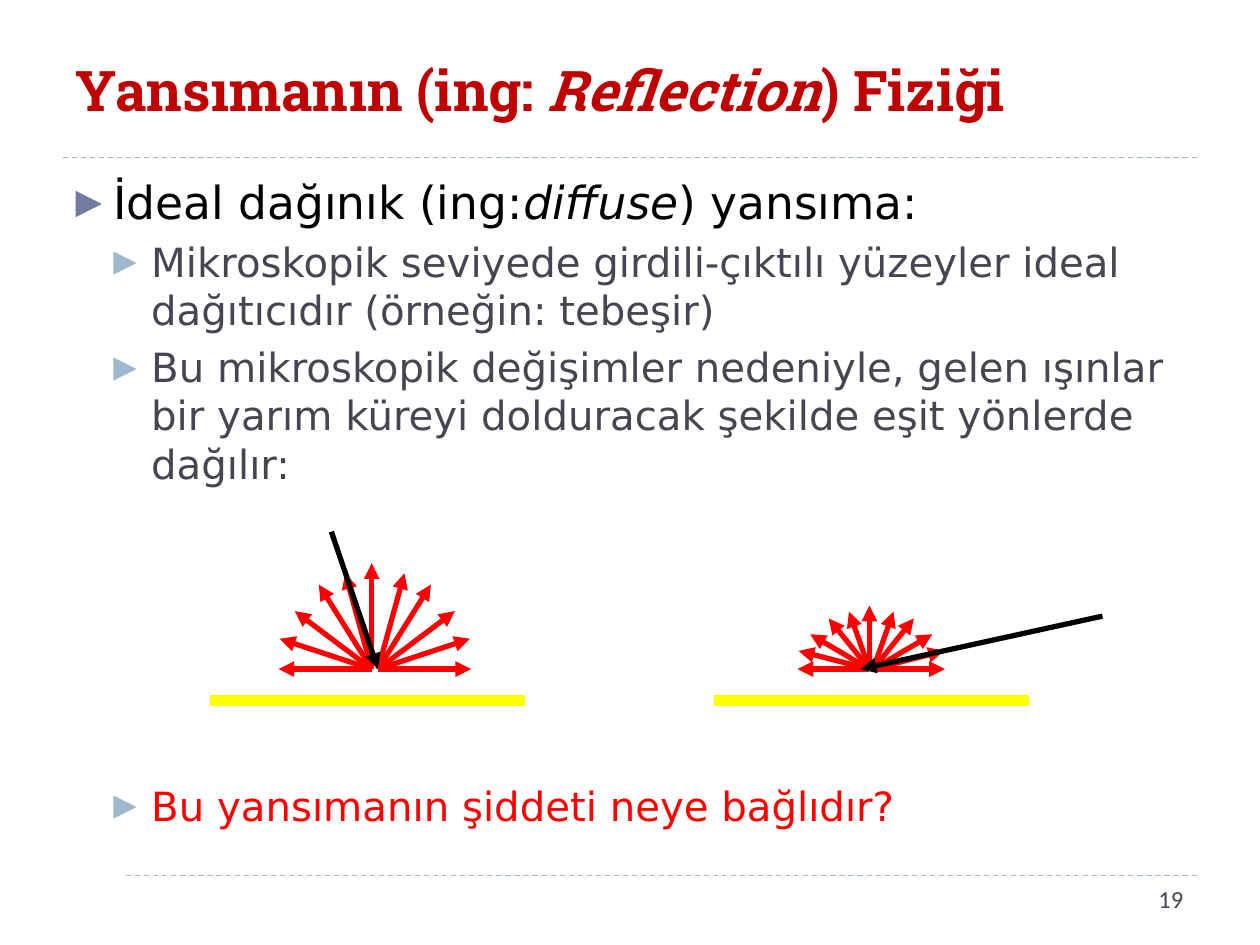
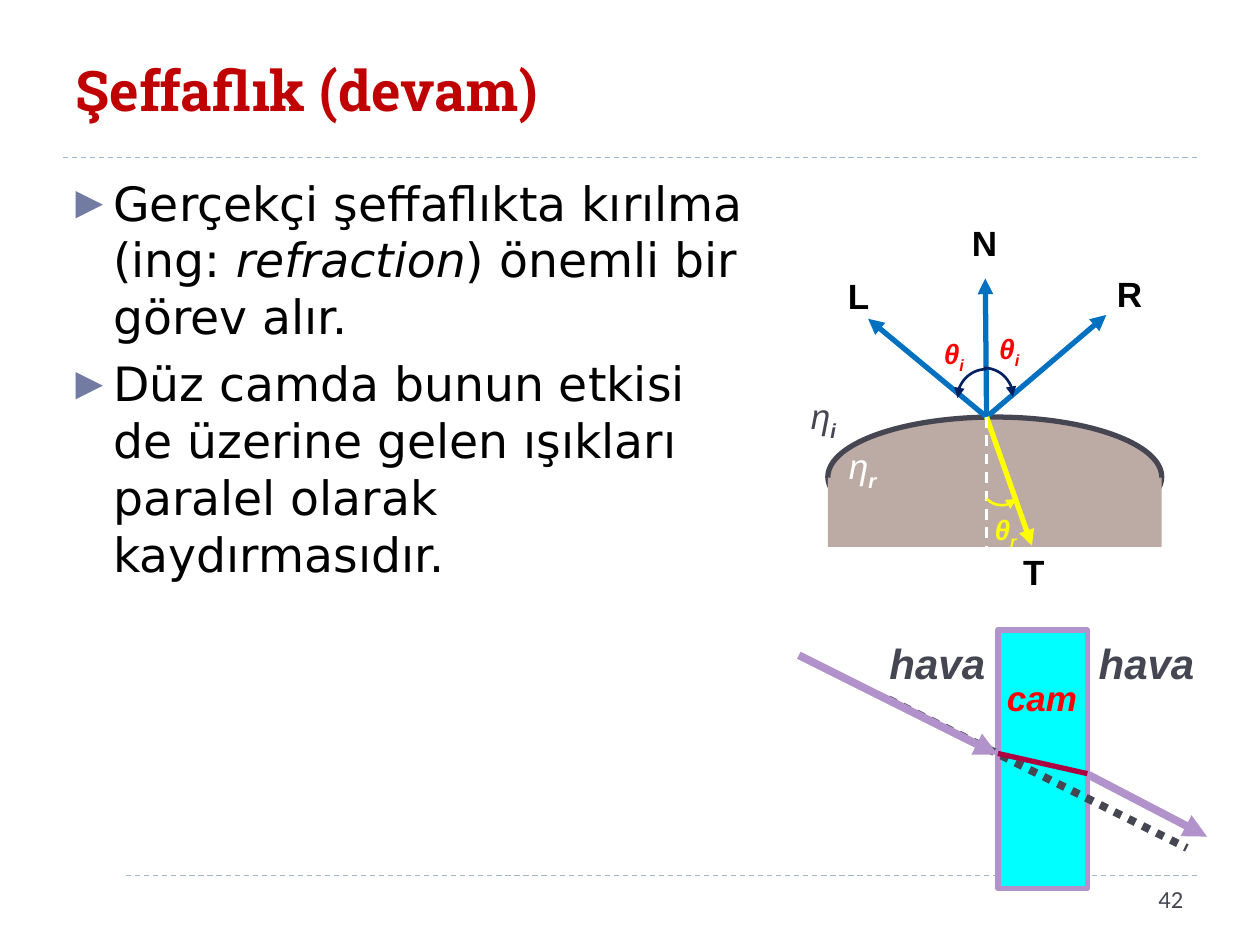
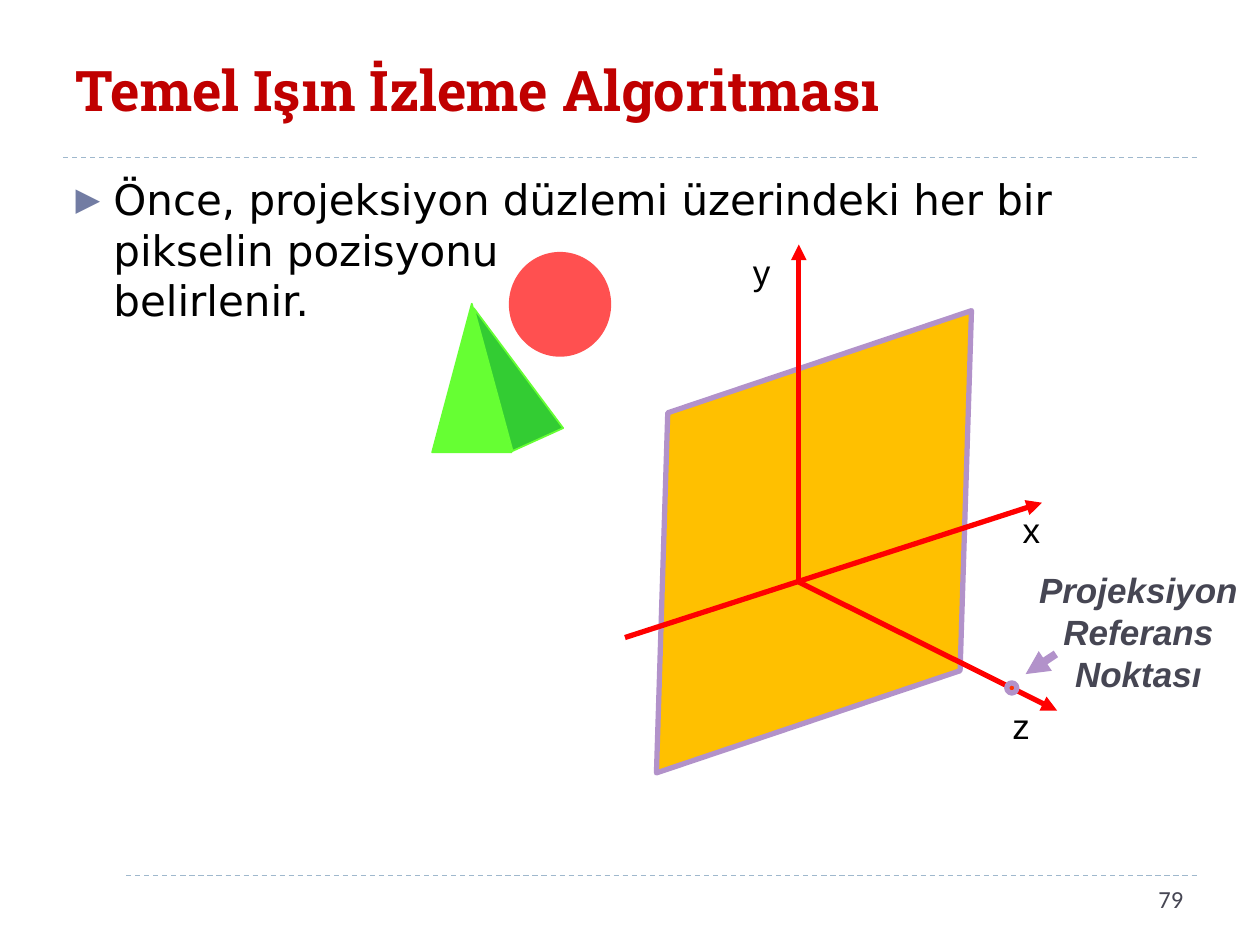
from lxml.etree import SubElement
from pptx import Presentation
from pptx.dml.color import RGBColor
from pptx.enum.dml import MSO_LINE
from pptx.enum.shapes import MSO_CONNECTOR, MSO_SHAPE
from pptx.enum.text import MSO_ANCHOR, MSO_AUTO_SIZE, PP_ALIGN
from pptx.oxml.ns import qn
from pptx.util import Inches, Pt

# Colours
BLACK = RGBColor(0x00, 0x00, 0x00)
WHITE = RGBColor(0xFF, 0xFF, 0xFF)
RED = RGBColor(0xFF, 0x00, 0x00)
YELLOW = RGBColor(0xFF, 0xFF, 0x00)
CRIMSON = RGBColor(0xC0, 0x00, 0x00)
SLATE = RGBColor(0x46, 0x46, 0x53)
INDIGO = RGBColor(0x72, 0x7C, 0xA3)
MIST = RGBColor(0x9F, 0xB8, 0xCD)
BLUE = RGBColor(0x00, 0x70, 0xC0)
NAVY = RGBColor(0x00, 0x20, 0x60)
TAUPE = RGBColor(0xBC, 0xAB, 0xA5)
CYAN = RGBColor(0x00, 0xFF, 0xFF)
LILAC = RGBColor(0xB2, 0x92, 0xCA)
WINE = RGBColor(0xAC, 0x00, 0x40)
AMBER = RGBColor(0xFF, 0xC0, 0x00)
LIME = RGBColor(0x66, 0xFF, 0x33)
GREEN = RGBColor(0x33, 0xCC, 0x33)
CORAL = RGBColor(0xFF, 0x50, 0x50)
ORANGE = RGBColor(0xFF, 0x33, 0x00)

# Fonts
HEAD, BODY, LABEL, FOOT = "Roboto Slab", "DejaVu Sans", "Arial", "Calibri"

# Ray tips of half a fan: distance out from the hub, height above it
RAYS = [(0.74, 0), (0.73, 0.24), (0.61, 0.46), (0.42, 0.67), (0.21, 0.76)]
PEAK = 0.84


def write(para, text, size, font, color, marks=""):
    """Add one run; marks holds b (bold), i (italic), _ (subscript)."""
    run = para.add_run()
    run.text = text
    run.font.size = Pt(size)
    run.font.name = font
    run.font.color.rgb = color
    run.font.bold = "b" in marks
    run.font.italic = "i" in marks
    if "_" in marks:
        run._r.get_or_add_rPr().set("baseline", "-25000")


def place(shape, left, top, width, height):
    shape.left, shape.top = Inches(left), Inches(top)
    shape.width, shape.height = Inches(width), Inches(height)


def tip(shape, end="tailEnd"):
    SubElement(shape.line._get_or_add_ln(), qn("a:" + end), type="triangle")


def draw(shapes, start, end, color, width=3, arrow=False, dash=None):
    line = shapes.add_connector(
        MSO_CONNECTOR.STRAIGHT, *[Inches(v) for v in (*start, *end)])
    line.line.color.rgb = color
    line.line.width = Pt(width)
    if dash:
        line.line.dash_style = dash
    if arrow:
        tip(line)
    SubElement(line._element.spPr, qn("a:effectLst"))


def block(shapes, kind, box, fill=None, edge=None, width=3, turn=0, adjust=()):
    shape = shapes.add_shape(kind, *[Inches(v) for v in box])
    if fill is None:
        shape.fill.background()
    else:
        shape.fill.solid()
        shape.fill.fore_color.rgb = fill
    if edge is None:
        shape.line.fill.background()
    else:
        shape.line.color.rgb = edge
        shape.line.width = Pt(width)
    for i, value in enumerate(adjust):
        shape.adjustments[i] = value
    shape.rotation = turn
    shape.shadow.inherit = False
    return shape


def arc(shapes, center, radius, start, stop, color, end):
    """Clockwise arc in degrees with an arrowhead at one end."""
    x, y = center
    box = (x - radius, y - radius, 2 * radius, 2 * radius)
    shape = block(shapes, MSO_SHAPE.ARC, box, None, color, 1.5,
                  adjust=(start * 0.6, stop * 0.6))
    tip(shape, end)


def label(shapes, box, parts, size, color, font=LABEL, align=PP_ALIGN.CENTER):
    """Text box made of (text, marks) parts."""
    text = shapes.add_textbox(*[Inches(v) for v in box])
    text.text_frame.word_wrap = True
    para = text.text_frame.paragraphs[0]
    para.alignment = align
    for words, marks in parts:
        write(para, words, size, font, color, marks)
    return text


def bullet(frame, parts, size, color=BLACK, level=0, gap=None):
    first = not frame.paragraphs[0].runs
    para = frame.paragraphs[0] if first else frame.add_paragraph()
    para.level = level
    para.space_before = Pt(gap or 6 - level)
    for i, (words, marks) in enumerate(parts):
        for j, row in enumerate(words.split("\n")):
            if j:
                para.add_line_break()
            write(para, row, size, BODY, color, marks)
    props = para._p.get_or_add_pPr()
    props.set("marL", str(Inches(0.3 * (level + 1))))
    props.set("indent", str(Inches(-0.3)))
    tint = SubElement(props, qn("a:buClr"))
    SubElement(tint, qn("a:srgbClr"), val=str(MIST if level else INDIGO))
    SubElement(props, qn("a:buSzPct"), val="76000")
    SubElement(props, qn("a:buFont"), typeface=BODY)
    SubElement(props, qn("a:buChar"), char="▶")


def start(deck, title, number, width=9):
    """New slide with rules, title and number; returns shapes and body frame."""
    slide = deck.slides.add_slide(deck.slide_layouts[1])
    shapes = slide.shapes
    head, body = shapes.title, slide.placeholders[1]
    # Rules and the mask over the lower rule's left end
    for y in (6.95, 1.25):
        draw(shapes, (0.5, y), (9.5, y), MIST, 0.75, dash=MSO_LINE.DASH)
    block(shapes, MSO_SHAPE.RECTANGLE, (0.35, 6.82, 0.63, 0.63), WHITE)
    # Title
    place(head, 0.5, 0.17, 9, 1.08)
    head.text_frame.vertical_anchor = MSO_ANCHOR.MIDDLE
    head.text_frame.auto_size = MSO_AUTO_SIZE.NONE
    para = head.text_frame.paragraphs[0]
    para.alignment = PP_ALIGN.LEFT
    for words, marks in title:
        write(para, words, 32, HEAD, CRIMSON, "b" + marks)
    # Slide number
    foot = label(shapes, (7.16, 6.97, 2.33, 0.4), [(number, "")], 14, SLATE,
                 FOOT, PP_ALIGN.RIGHT)
    foot.fill.solid()
    foot.fill.fore_color.rgb = WHITE
    # Body
    place(body, 0.5, 1.33, width, 5.4)
    body.text_frame.auto_size = MSO_AUTO_SIZE.NONE
    return shapes, body.text_frame


def fan(shapes, left, right, base, wide=1, high=1):
    """Red rays spreading over a half circle from two close hubs."""
    group = shapes.add_group_shape().shapes
    for hub, side in ((left, -1), (right, 1)):
        for out, rise in RAYS:
            end = (hub + side * out * wide, base - rise * high)
            draw(group, (hub, base), end, RED, arrow=True)
    draw(group, (left, base), (left, base - PEAK * high), RED, arrow=True)


def reflect(deck):
    shapes, body = start(deck, [("Yansımanın (ing: ", ""), ("Reflection", "i"),
                                (") Fiziği", "")], "19")
    bullet(body, [("İdeal dağınık (ing:", ""), ("diffuse", "i"),
                  (") yansıma:", "")], 26)
    bullet(body, [("Mikroskopik seviyede girdili-çıktılı yüzeyler ideal "
                   "dağıtıcıdır (örneğin: tebeşir)", "")], 23, SLATE, 1)
    bullet(body, [("Bu mikroskopik değişimler nedeniyle, gelen ışınlar bir "
                   "yarım küreyi dolduracak şekilde eşit yönlerde dağılır:",
                   "")], 23, SLATE, 1)
    bullet(body, [("Bu yansımanın şiddeti neye bağlıdır?", "")], 23, RED, 1,
           gap=168)
    # Surfaces, scattered rays and incoming rays
    for x in (1.67, 5.67):
        draw(shapes, (x, 5.56), (x + 2.5, 5.56), YELLOW, 6)
    fan(shapes, 2.95, 3, 5.31)
    fan(shapes, 6.9, 6.93, 5.31, 0.77, 0.6)
    draw(shapes, (2.63, 4.22), (3, 5.31), BLACK, arrow=True)
    draw(shapes, (8.75, 4.89), (6.83, 5.31), BLACK, arrow=True)


def refract(deck):
    shapes, body = start(deck, [("Şeffaflık (devam)", "")], "42", 5.6)
    bullet(body, [("Gerçekçi şeffaflıkta kırılma (ing: ", ""),
                  ("refraction", "i"), (") önemli bir görev alır.", "")], 27)
    bullet(body, [("Düz camda bunun etkisi de üzerine gelen ışıkları paralel "
                   "olarak kaydırmasıdır.", "")], 27)
    # Curved surface
    block(shapes, MSO_SHAPE.OVAL, (6.57, 3.31, 2.65, 0.95), TAUPE, SLATE)
    block(shapes, MSO_SHAPE.RECTANGLE, (6.57, 3.79, 2.65, 0.55), TAUPE)
    # Vectors and angles
    hit = (7.83, 3.31)
    for end in ((6.89, 2.53), (7.82, 2.21), (8.78, 2.5)):
        draw(shapes, hit, end, BLUE, arrow=True)
    arc(shapes, (7.83, 3.16), 0.23, 180, 270, NAVY, "headEnd")
    arc(shapes, (7.81, 3.15), 0.23, 270, 0, NAVY, "tailEnd")
    draw(shapes, hit, (8.19, 4.33), YELLOW, arrow=True)
    draw(shapes, hit, (7.83, 4.42), WHITE, 1.5, dash=MSO_LINE.DASH)
    arc(shapes, (7.95, 3.85), 0.16, 43, 137, YELLOW, "headEnd")
    # Angle, vector and medium labels
    for x, y, sub, color in ((7.06, 2.62, "i", RED), (7.5, 2.58, "i", RED),
                             (7.47, 4.02, "r", YELLOW)):
        label(shapes, (x, y, 1.02, 0.37), [("θ", "bi"), (sub, "bi_")],
              16, color)
    for name, x, y in (("L", 6.5, 2.13), ("N", 7.5, 1.71), ("R", 8.65, 2.11),
                       ("T", 7.89, 4.32)):
        label(shapes, (x, y, 0.63, 0.43), [(name, "b")], 20, BLACK)
    for x, y, sub, color in ((6.18, 3.08, "i", SLATE),
                             (6.49, 3.48, "r", WHITE)):
        label(shapes, (x, y, 0.71, 0.43), [("η", "i"), (sub, "bi_")],
              20, color)
    # Glass pane with the shifted ray
    pane = shapes.add_group_shape().shapes
    block(pane, MSO_SHAPE.RECTANGLE, (7.92, 5, 0.71, 2.05), CYAN, LILAC)
    draw(pane, (7.05, 5.55), (9.42, 6.73), SLATE, 4.5,
         dash=MSO_LINE.ROUND_DOT)
    draw(pane, (6.34, 5.2), (7.92, 5.99), LILAC, 4.5, arrow=True)
    draw(pane, (7.92, 5.98), (8.63, 6.14), WINE)
    draw(pane, (8.64, 6.15), (9.58, 6.64), LILAC, 4.5, arrow=True)
    for x in (6.81, 8.47):
        label(pane, (x, 5.01, 1.26, 0.5), [("hava", "bi")], 24, SLATE)
    label(pane, (7.64, 5.32, 1.26, 0.43), [("cam", "bi")], 20, RED)


def trace(deck):
    shapes, body = start(deck, [("Temel Işın İzleme Algoritması", "")], "79")
    bullet(body, [("Önce, projeksiyon düzlemi üzerindeki her bir pikselin "
                   "pozisyonu\nbelirlenir.", "")], 24)
    # Projection plane and axes
    block(shapes, MSO_SHAPE.PARALLELOGRAM, (4.69, 2.96, 3.54, 2.68), AMBER,
          LILAC, turn=341.4, adjust=(0.372,))
    zero = (6.34, 4.62)
    for tail, end in ((zero, (6.34, 1.94)), (zero, (8.39, 5.64)),
                      ((4.96, 5.06), (8.27, 3.99))):
        draw(shapes, tail, end, RED, arrow=True)
    for name, x, y in (("x", 7.91, 3.99), ("y", 5.77, 1.94),
                       ("z", 7.83, 5.54)):
        label(shapes, (x, y, 0.55, 0.43), [(name, "")], 20, BLACK)
    # Reference point
    block(shapes, MSO_SHAPE.OVAL, (7.99, 5.42, 0.08, 0.08), ORANGE, LILAC)
    label(shapes, (8.07, 4.46, 1.93, 1.11),
          [("Projeksiyon Referans Noktası", "bi")], 20, SLATE)
    draw(shapes, (8.38, 5.19), (8.14, 5.35), LILAC, 4.5, arrow=True)
    # Pyramid and ball
    cone = MSO_SHAPE.ISOSCELES_TRIANGLE
    block(shapes, cone, (3.43, 2.41, 0.63, 1.18), LIME, LIME, 1)
    block(shapes, cone, (3.81, 2.38, 0.44, 1.16), GREEN, LIME, 1,
          turn=335.7, adjust=(0.422,))
    block(shapes, MSO_SHAPE.OVAL, (4.06, 2.02, 0.77, 0.79), CORAL, CORAL)


def main():
    deck = Presentation()
    deck.slide_width, deck.slide_height = Inches(10), Inches(7.5)
    reflect(deck)
    refract(deck)
    trace(deck)
    deck.save("out.pptx")


if __name__ == "__main__":
    main()
